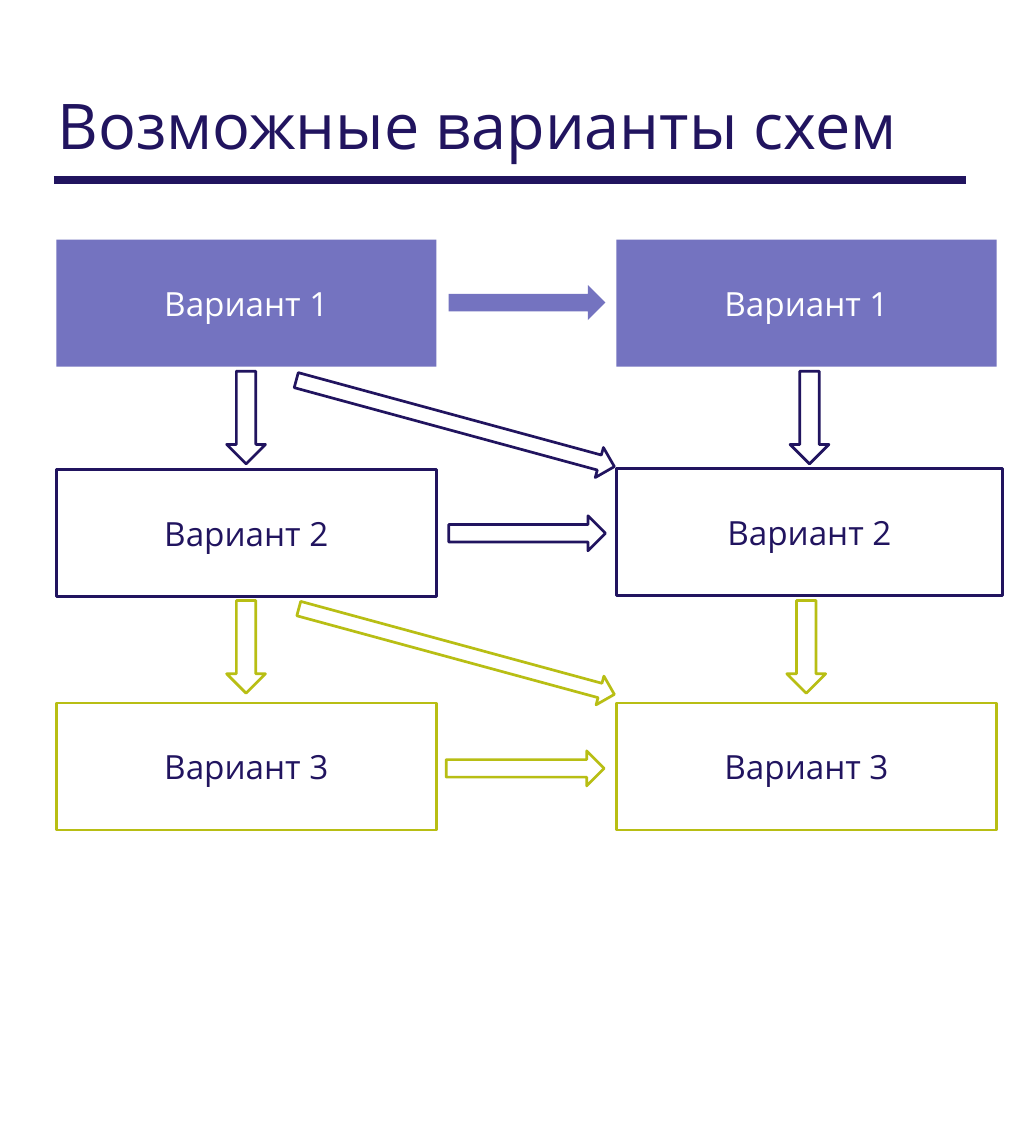
from dataclasses import dataclass

from lxml.etree import SubElement
from pptx import Presentation
from pptx.dml.color import RGBColor
from pptx.enum.shapes import MSO_CONNECTOR, MSO_SHAPE
from pptx.enum.text import MSO_ANCHOR, MSO_AUTO_SIZE, PP_ALIGN
from pptx.oxml.ns import qn
from pptx.util import Pt


@dataclass(frozen=True)
class Theme:
    font: str = "Open Sans"
    navy: str = "21145F"
    violet: str = "7473C0"
    olive: str = "B8BE14"
    white: str = "FFFFFF"
    title_size: float = 70
    box_size: float = 37
    outline: float = 3
    rule: float = 8.75


THEME = Theme()
BOX_W, BOX_H = 422.6, 141.1


def rgb(value):
    return RGBColor.from_string(value)


def write(sp, text, *, size, color, align, anchor, inset, spacing=1.0):
    tf = sp.text_frame
    tf.word_wrap = True
    tf.auto_size = MSO_AUTO_SIZE.NONE
    tf.vertical_anchor = anchor
    tf.margin_left = tf.margin_right = Pt(inset[0])
    tf.margin_top = tf.margin_bottom = Pt(inset[1])
    p = tf.paragraphs[0]
    p.alignment = align
    p.line_spacing = spacing
    r = p.add_run()
    r.text = text
    r.font.name = THEME.font
    r.font.size = Pt(size)
    r.font.color.rgb = rgb(color)


def add_title(s, text):
    sp = s.shapes.title
    sp.left, sp.top, sp.width, sp.height = Pt(56.9), Pt(25.2), Pt(1024.6), Pt(159.8)
    write(sp, text, size=THEME.title_size, color=THEME.navy, align=PP_ALIGN.LEFT,
          anchor=MSO_ANCHOR.BOTTOM, inset=(7.2, 3.6), spacing=0.9)


def add_rule(s, left, right, y):
    line = s.shapes.add_connector(MSO_CONNECTOR.STRAIGHT, Pt(left), Pt(y), Pt(right), Pt(y))
    line.line.color.rgb = rgb(THEME.navy)
    line.line.width = Pt(THEME.rule)
    SubElement(line._element.spPr, qn("a:effectLst"))


def add_figure(s, kind, left, top, width, height, fill, outline):
    sp = s.shapes.add_shape(kind, Pt(left), Pt(top), Pt(width), Pt(height))
    sp.shadow.inherit = False
    sp.fill.solid()
    sp.fill.fore_color.rgb = rgb(fill)
    if outline:
        sp.line.color.rgb = rgb(outline)
        sp.line.width = Pt(THEME.outline)
    else:
        sp.line.fill.background()
    return sp


def add_box(s, text, left, top, width, fill, outline, color):
    sp = add_figure(s, MSO_SHAPE.RECTANGLE, left, top, width, BOX_H, fill, outline)
    write(sp, text, size=THEME.box_size, color=color, align=PP_ALIGN.CENTER,
          anchor=MSO_ANCHOR.MIDDLE, inset=(5.8, 5.8))


def add_arrow(s, cx, cy, width, length, fill, outline, rotation=0):
    sp = add_figure(s, MSO_SHAPE.DOWN_ARROW, cx - width / 2, cy - length / 2,
                    width, length, fill, outline)
    sp.rotation = rotation


def main():
    prs = Presentation()
    prs.slide_width, prs.slide_height = Pt(1134), Pt(1275.8)
    s = prs.slides.add_slide(prs.slide_layouts[5])

    add_rule(s, 59.8, 1074.2, 200.2)
    add_title(s, "Возможные варианты схем")

    filled = (THEME.violet, None)
    navy = (THEME.white, THEME.navy)
    olive = (THEME.white, THEME.olive)

    rows = [
        ("Вариант 1", 266.4, 266.4, BOX_W, filled, THEME.white),
        ("Вариант 2", 522, 520.6, 429.1, navy, THEME.navy),
        ("Вариант 3", 781.2, 781.2, BOX_W, olive, THEME.navy),
    ]
    for text, left_top, right_top, right_width, style, color in rows:
        add_box(s, text, 62.6, left_top, BOX_W, *style, color)
        add_box(s, text, 685.4, right_top, right_width, *style, color)

    for cx, cy, length, style in [
        (586, 336.2, 174.2, filled),
        (586, 592.6, 174.2, navy),
        (583.9, 853.9, 175.7, olive),
    ]:
        add_arrow(s, cx, cy, 38.9, length, *style, rotation=270)

    for cx, cy, width, length, style in [
        (506.2, 470.5, 34.6, 366.5, navy),
        (507.6, 724, 33.1, 363.6, olive),
    ]:
        add_arrow(s, cx, cy, width, length, *style, rotation=285.2)

    for cy, right_cx, style in [(464, 900, navy), (718.9, 896.4, olive)]:
        for cx in (273.6, right_cx):
            add_arrow(s, cx, cy, 43.2, 103, *style)

    prs.save("out.pptx")


if __name__ == "__main__":
    main()
